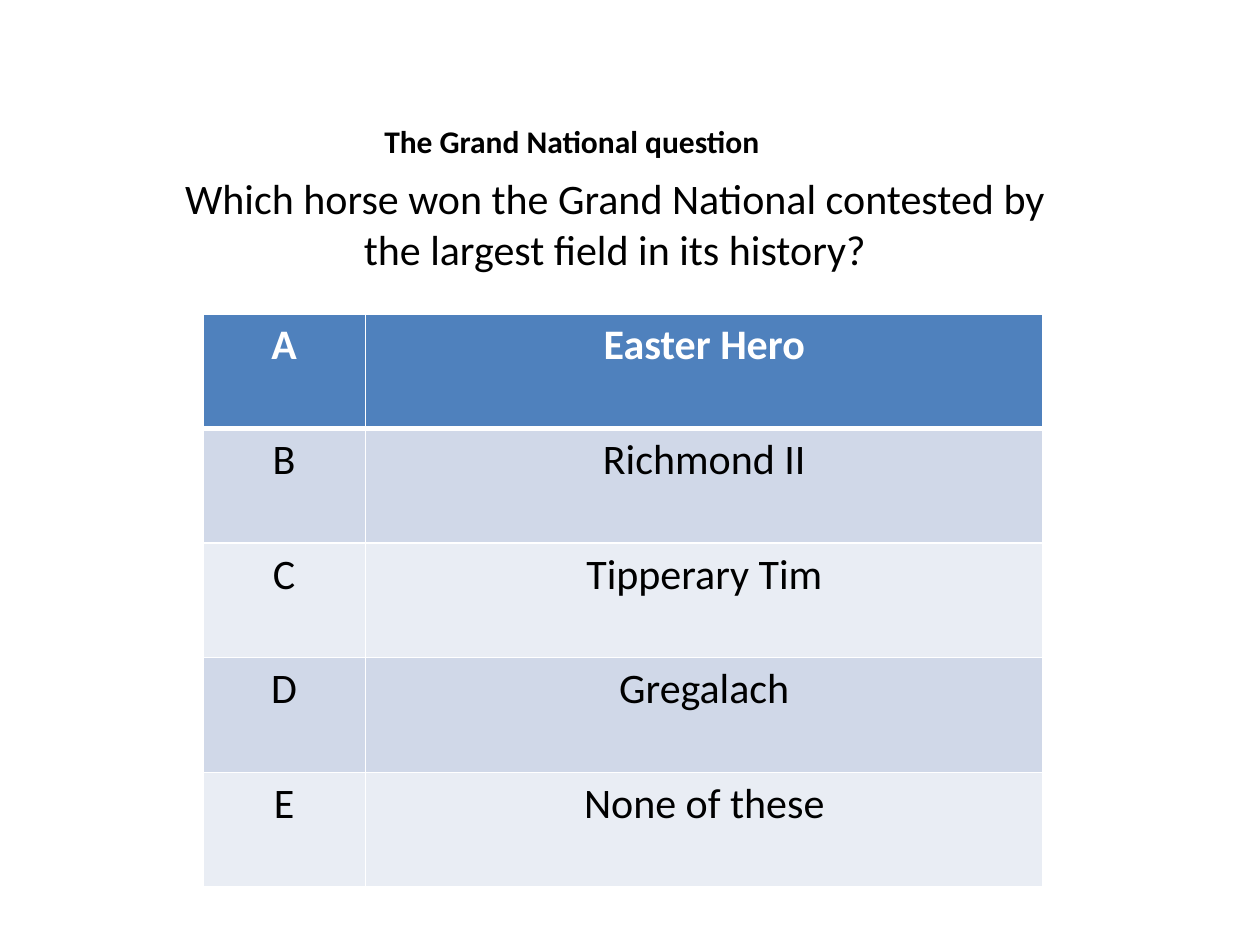
from dataclasses import dataclass

from lxml.etree import SubElement
from pptx import Presentation
from pptx.dml.color import RGBColor
from pptx.enum.text import MSO_ANCHOR, MSO_AUTO_SIZE, PP_ALIGN
from pptx.oxml.ns import qn
from pptx.util import Inches, Pt


@dataclass(frozen=True)
class Theme:
    font: str = "Calibri"
    text: str = "000000"
    header_text: str = "FFFFFF"
    header_fill: str = "4F81BD"
    bands: tuple = ("D0D8E8", "E9EDF4")
    border: str = "FFFFFF"
    heading_size: int = 18
    body_size: int = 24


class QuizSlide:
    def __init__(self, presentation, theme):
        self.theme = theme
        # Title and Content layout
        self.slide = presentation.slides.add_slide(presentation.slide_layouts[1])

    def set_text(self, text_frame, text, size, color, bold=False,
                 align=PP_ALIGN.CENTER):
        text_frame.text = text
        paragraph = text_frame.paragraphs[0]
        paragraph.alignment = align
        paragraph.space_before = Pt(0)
        font = paragraph.runs[0].font
        formats = {"name": self.theme.font, "size": Pt(size), "bold": bold}
        for name, value in formats.items():
            setattr(font, name, value)
        font.color.rgb = RGBColor.from_string(color)
        return paragraph

    def place(self, shape, left, top, width, height, wrap):
        box = {"left": left, "top": top, "width": width, "height": height}
        for name, value in box.items():
            setattr(shape, name, Inches(value))
        frame_formats = {
            "word_wrap": wrap,
            "auto_size": MSO_AUTO_SIZE.SHAPE_TO_FIT_TEXT,
            "vertical_anchor": MSO_ANCHOR.TOP,
        }
        for name, value in frame_formats.items():
            setattr(shape.text_frame, name, value)

    def heading(self, text, *box):
        shape = self.slide.shapes.title
        self.place(shape, *box, wrap=False)
        self.set_text(shape.text_frame, text, self.theme.heading_size,
                      self.theme.text, bold=True, align=PP_ALIGN.LEFT)

    def question(self, text, *box):
        shape = self.slide.placeholders[1]
        self.place(shape, *box, wrap=True)
        paragraph = self.set_text(shape.text_frame, text, self.theme.body_size,
                                  self.theme.text)
        # Plain paragraph: no bullet and no hanging indent
        properties = paragraph._p.get_or_add_pPr()
        properties.set("marL", "0")
        properties.set("indent", "0")
        SubElement(properties, qn("a:buNone"))

    def cell_borders(self, cell, widths):
        properties = cell._tc.get_or_add_tcPr()
        for index, (side, width) in enumerate(widths.items()):
            line = properties.makeelement(qn(f"a:ln{side}"), {"w": str(Pt(width))})
            fill = SubElement(line, qn("a:solidFill"))
            SubElement(fill, qn("a:srgbClr"), val=self.theme.border)
            properties.insert(index, line)

    def answers(self, rows, left, top, column_widths, row_height):
        theme = self.theme
        table = self.slide.shapes.add_table(
            len(rows), len(column_widths), Inches(left), Inches(top),
            Inches(sum(column_widths)), Inches(row_height * len(rows))).table
        for column, width in zip(table.columns, column_widths):
            column.width = Inches(width)
        for row_index, values in enumerate(rows):
            header = row_index == 0
            fill = theme.header_fill if header else theme.bands[(row_index - 1) % 2]
            color = theme.header_text if header else theme.text
            # A thick rule separates the first row from the rest
            widths = {"L": 1, "R": 1, "T": 3 if row_index == 1 else 1,
                      "B": 3 if header else 1}
            for column_index, value in enumerate(values):
                cell = table.cell(row_index, column_index)
                cell.fill.solid()
                cell.fill.fore_color.rgb = RGBColor.from_string(fill)
                self.set_text(cell.text_frame, value, theme.body_size, color,
                              bold=header)
                self.cell_borders(cell, widths)


def main():
    presentation = Presentation()
    presentation.slide_width = Inches(10)
    presentation.slide_height = Inches(7.5)
    quiz = QuizSlide(presentation, Theme())

    # Heading and question
    quiz.heading("The Grand National question", 2.95, 0.92, 3.21, 0.4)
    quiz.question("Which horse won the Grand National contested by "
                  "the largest field in its history?", 1.14, 1.32, 7.48, 0.91)

    # Lettered answers
    horses = ["Easter Hero", "Richmond II", "Tipperary Tim", "Gregalach",
              "None of these"]
    quiz.answers(list(zip("ABCDE", horses)), 1.61, 2.49, (1.29, 5.38), 0.91)

    presentation.save("out.pptx")


if __name__ == "__main__":
    main()
